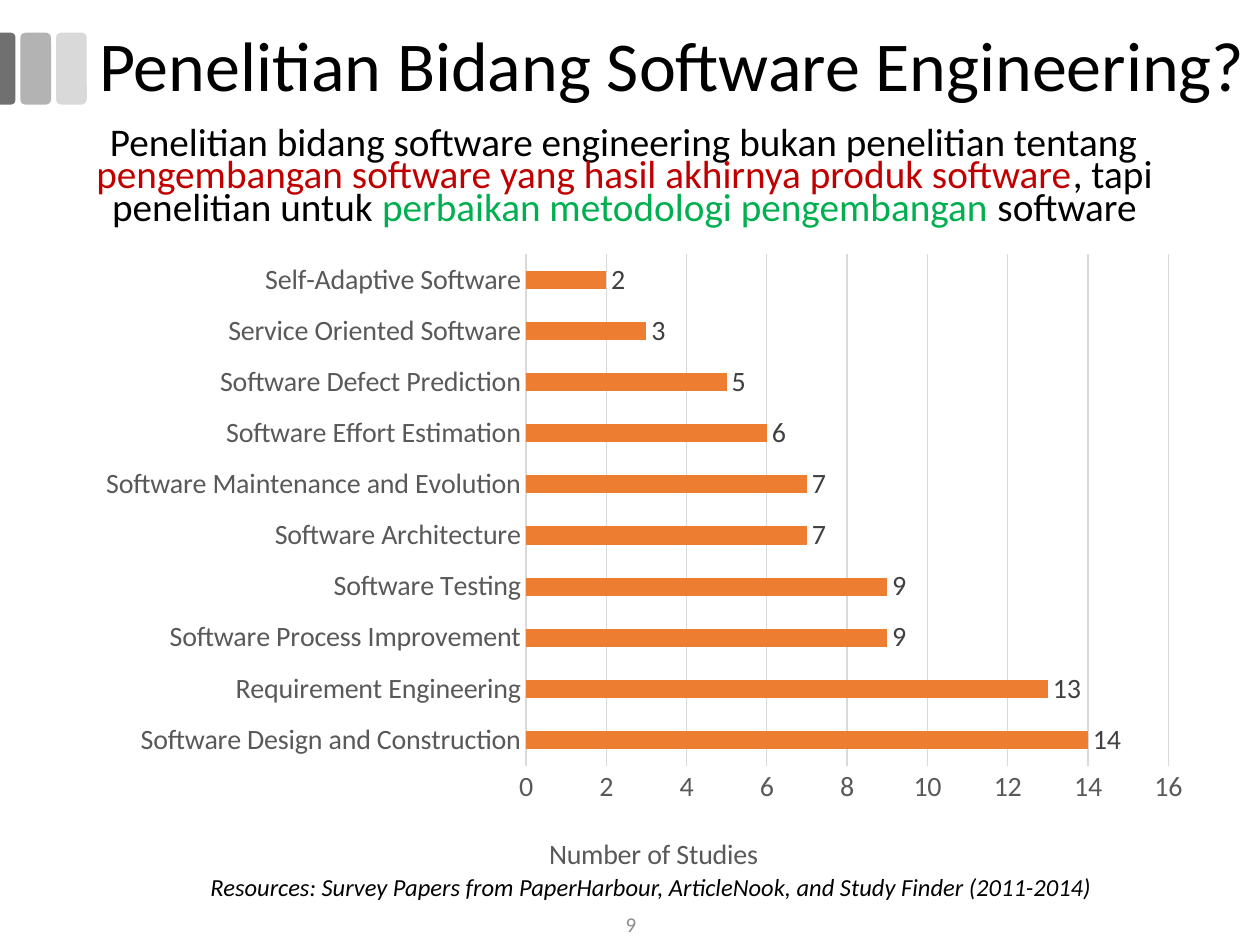
from dataclasses import dataclass

from lxml import etree
from pptx import Presentation
from pptx import util as u
from pptx.chart import data as chart_data
from pptx.dml.color import RGBColor
from pptx.enum import chart as charts, shapes, text
from pptx.oxml.ns import qn


@dataclass(frozen=True)
class Theme:
    font: str = "Calibri"
    ink: str = "000000"
    wrong: str = "C00000"
    right: str = "00B050"
    bar: str = "ED7D31"
    axis: str = "595959"
    value: str = "404040"
    grid: str = "D9D9D9"
    number: str = "8C8C8C"
    tabs: tuple = ("D9D9D9", "B3B3B3", "707070")
    title_size: float = 40
    body_size: float = 22.4
    chart_size: float = 16
    source_size: float = 14
    number_size: float = 12


def format_font(font, theme, size, color, italic=None):
    font.name, font.size, font.italic = theme.font, u.Pt(size), italic
    font.color.rgb = RGBColor.from_string(color)


def add_text(para, words, *, theme, size, color=None, italic=None):
    """Append one formatted span to a paragraph."""
    span = para.add_run()
    span.text = words
    format_font(span.font, theme, size, color or theme.ink, italic)


def place_in_chart(parent, x, y, width=None, height=None):
    """Give a chart part a fixed place, in fractions of the chart."""
    layout = parent.find(qn("c:layout"))
    if layout is None:
        layout = etree.Element(qn("c:layout"))
        rich = parent.find(qn("c:tx"))
        if rich is None:
            parent.insert(0, layout)
        else:
            rich.addnext(layout)
    for child in list(layout):
        layout.remove(child)
    manual = etree.SubElement(layout, qn("c:manualLayout"))
    settings = [("xMode", "edge"), ("yMode", "edge"), ("x", x), ("y", y)]
    if width is not None:
        settings.insert(0, ("layoutTarget", "inner"))
        settings += [("w", width), ("h", height)]
    for name, value in settings:
        etree.SubElement(manual, qn(f"c:{name}")).set("val", str(value))


class SlideBuilder:
    def __init__(self, page, theme):
        self.page, self.theme = page, theme

    def tab(self, kind, left, top, width, height, color, rotation=0):
        shape = self.page.shapes.add_shape(
            kind, u.Cm(left), u.Cm(top), u.Cm(width), u.Cm(height))
        shape.shadow.inherit = False
        shape.fill.solid()
        shape.fill.fore_color.rgb = RGBColor.from_string(color)
        shape.line.fill.background()
        shape.rotation = rotation
        return shape

    def text_box(self, left, top, width, height, spans, size, *,
                 align=text.PP_ALIGN.CENTER, anchor=text.MSO_ANCHOR.MIDDLE,
                 spacing=None, italic=None):
        box = self.page.shapes.add_textbox(
            u.Cm(left), u.Cm(top), u.Cm(width), u.Cm(height))
        frame = box.text_frame
        frame.word_wrap, frame.vertical_anchor = True, anchor
        para = frame.paragraphs[0]
        para.alignment, para.line_spacing = align, spacing
        for words, color in spans:
            add_text(para, words, theme=self.theme, size=size,
                     color=color, italic=italic)

    def bar_chart(self, left, top, width, height, studies, axis_title):
        theme = self.theme
        data = chart_data.CategoryChartData()
        data.categories = list(studies)
        data.add_series("Series 1", list(studies.values()))
        chart = self.page.shapes.add_chart(
            charts.XL_CHART_TYPE.BAR_CLUSTERED, u.Cm(left), u.Cm(top),
            u.Cm(width), u.Cm(height), data).chart
        chart.has_legend = chart.has_title = False
        format_font(chart.font, theme, theme.chart_size, theme.ink)

        # Bars and their values
        plot = chart.plots[0]
        plot.gap_width, plot.vary_by_categories = 182, False
        fill = plot.series[0].format.fill
        fill.solid()
        fill.fore_color.rgb = RGBColor.from_string(theme.bar)
        plot.has_data_labels = True
        labels = plot.data_labels
        labels.show_value = True
        labels.position = charts.XL_LABEL_POSITION.OUTSIDE_END
        format_font(labels.font, theme, theme.chart_size, theme.value)

        # Axes and gridlines
        categories, values = chart.category_axis, chart.value_axis
        for axis in (categories, values):
            axis.major_tick_mark = axis.minor_tick_mark = charts.XL_TICK_MARK.NONE
            format_font(axis.tick_labels.font, theme, theme.chart_size, theme.axis)
        values.minimum_scale, values.maximum_scale, values.major_unit = 0, 16, 2
        values.has_major_gridlines = True
        values.format.line.fill.background()
        for line in (categories.format.line, values.major_gridlines.format.line):
            line.color.rgb = RGBColor.from_string(theme.grid)
            line.width = u.Pt(0.75)

        # Axis title and plot position
        title = values.axis_title
        add_text(title.text_frame.paragraphs[0], axis_title, theme=theme,
                 size=theme.chart_size, color=theme.axis, italic=False)
        title.text_frame.paragraphs[0].font.bold = False
        for span in title.text_frame.paragraphs[0].runs:
            span.font.bold = False
        place_in_chart(title._element, 0.41, 0.91)
        place_in_chart(chart._chartSpace.chart.plotArea, 0.394, 0.019, 0.573, 0.791)


STUDIES = {
    "Software Design and Construction": 14,
    "Requirement Engineering": 13,
    "Software Process Improvement": 9,
    "Software Testing": 9,
    "Software Architecture": 7,
    "Software Maintenance and Evolution": 7,
    "Software Effort Estimation": 6,
    "Software Defect Prediction": 5,
    "Service Oriented Software": 3,
    "Self-Adaptive Software": 2,
}


def main():
    theme = Theme()
    deck = Presentation()
    deck.slide_width, deck.slide_height = u.Cm(25.4), u.Cm(19.05)
    builder = SlideBuilder(deck.slides.add_slide(deck.slide_layouts[6]), theme)

    # Grey tabs at the left edge
    for index, color in enumerate(theme.tabs[:2]):
        builder.tab(shapes.MSO_SHAPE.ROUNDED_RECTANGLE,
                    1.13 - index * 0.72, 0.66, 0.62, 1.45, color)
    edge = builder.tab(shapes.MSO_SHAPE.ROUND_2_SAME_RECTANGLE,
                       -0.57, 1.23, 1.45, 0.31, theme.tabs[2], rotation=90)
    edge.adjustments[0] = 0.29

    # Title and statement
    builder.text_box(1.75, 0.43, 23.62, 1.9,
                     [("Penelitian Bidang Software Engineering?", theme.ink)],
                     theme.title_size, align=text.PP_ALIGN.LEFT, spacing=0.9)
    builder.text_box(0.84, 2.49, 23.5, 2.26, [
        ("Penelitian bidang software engineering bukan penelitian tentang ", theme.ink),
        ("pengembangan software yang hasil akhirnya produk software", theme.wrong),
        (", tapi penelitian untuk ", theme.ink),
        ("perbaikan metodologi pengembangan", theme.right),
        (" software", theme.ink),
    ], theme.body_size, anchor=text.MSO_ANCHOR.TOP, spacing=0.7)

    # Studies per topic
    builder.bar_chart(1.7, 4.88, 22.6, 13.03, STUDIES, "Number of Studies")

    # Source line and page number
    builder.text_box(1.83, 17.45, 22.6, 0.86, [
        ("Resources: Survey Papers from PaperHarbour, ArticleNook, "
         "and Study Finder (2011-2014)", theme.ink)], theme.source_size, italic=True)
    builder.text_box(9.86, 18.21, 5.72, 0.84, [("9", theme.number)], theme.number_size)

    deck.save("out.pptx")


if __name__ == "__main__":
    main()
